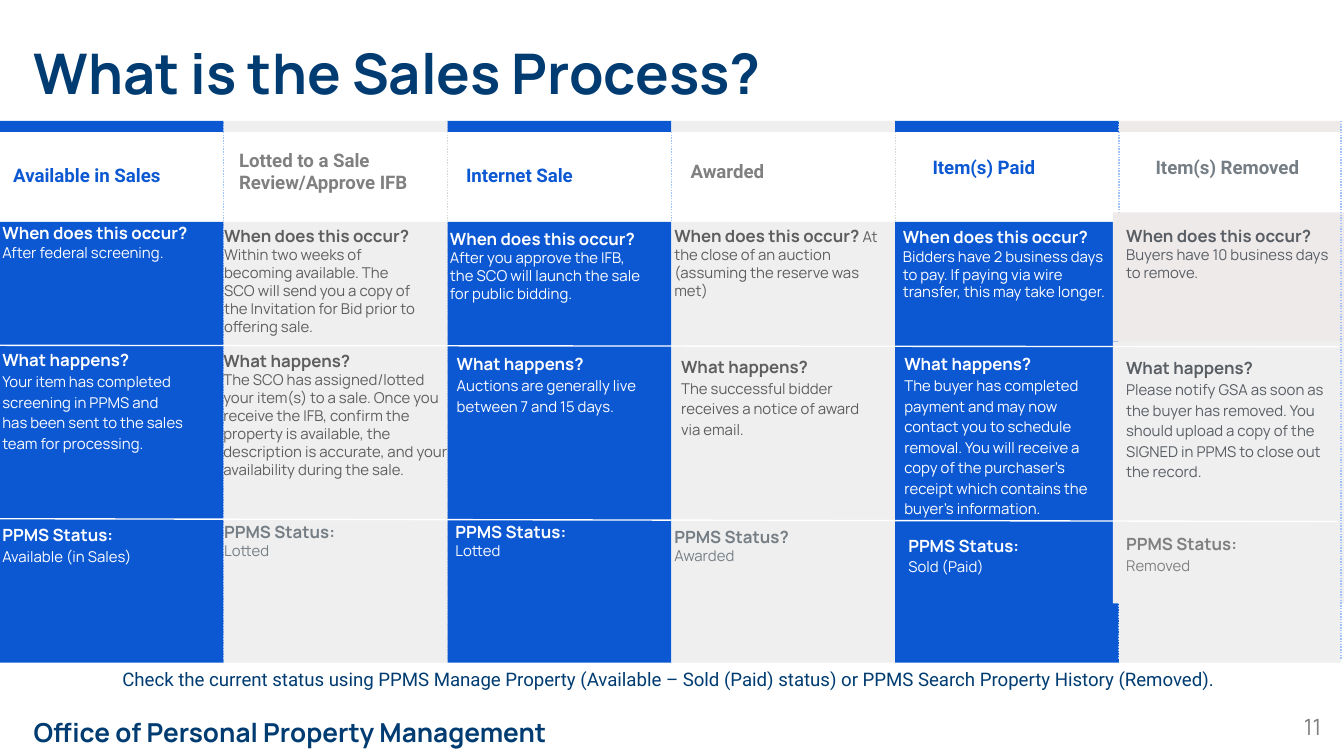
import dataclasses
import typing

import lxml.etree
import pptx
import pptx.dml.color
import pptx.enum.dml
import pptx.enum.shapes
import pptx.enum.text
import pptx.oxml.ns
import pptx.util

COLOURS = {
    "navy": "003C71", "blue": "0C58D3", "pale": "EFEFEF", "warm": "EEEAEA",
    "white": "FFFFFF", "text": "5E5E5E", "slate": "595E64", "steel": "767E85",
    "grey": "808080", "blue dots": "A1C3FA", "grey dots": "D9D9D9",
}
COLUMN_STEP = 119.9
LAST_WIDTH = 118.8
STRIP_TOP, STRIP_HEIGHT = 64.8, 5.8
BODY_TOP, BODY_HEIGHT = 118.8, 236.2
DOTS_BOTTOM = 353.5
LEFT = pptx.enum.text.PP_ALIGN.LEFT
CENTRE = pptx.enum.text.PP_ALIGN.CENTER
RIGHT = pptx.enum.text.PP_ALIGN.RIGHT


@dataclasses.dataclass
class Cell:
    """One question and answer; inline puts both in the same paragraph."""
    box: tuple
    heading: str
    answer: str
    colour: str
    spacing: typing.Optional[float] = None
    inline: bool = False
    fill: typing.Optional[str] = None


@dataclasses.dataclass
class Stage:
    title: list
    title_box: tuple
    title_colour: str
    fill: str
    strip: str
    dots: str
    cells: list
    middle: bool = False


WHEN = "When does this occur?"
WHAT = "What happens?"
STATUS = "PPMS Status:"

STAGES = [
    Stage(["Available in Sales"], (0, 79.2, 120, 28.8), "blue", "blue", "blue", "blue dots", [
        Cell((-5.8, 112.3, 126, 69), WHEN, "After federal screening.", "white", inline=True),
        Cell((-5.8, 178.6, 113, 90.7), WHAT,
             "Your item has completed screening in PPMS and has been sent to the sales "
             "team for processing.", "white", 1.15),
        Cell((-5.8, 272.2, 113, 58.3), STATUS, "Available (in Sales)", "white", 1.15),
    ]),
    Stage(["Lotted to a Sale", "Review/Approve IFB"], (121, 71.3, 117.4, 41), "grey",
          "pale", "pale", "grey dots", [
        Cell((113, 113.8, 120.2, 69), WHEN,
             "Within two weeks of becoming available. The SCO will send you a copy of the "
             "Invitation for Bid prior to offering sale.", "text", inline=True),
        Cell((112.6, 180.7, 136.8, 111.6), WHAT,
             "The SCO has assigned/lotted your item(s) to a sale. Once you receive the IFB, "
             "confirm the property is available, the description is accurate, and your "
             "availability during the sale.", "text"),
        Cell((113, 272.2, 104.4, 35.3), STATUS, "Lotted", "steel"),
    ], middle=True),
    Stage(["Internet Sale"], (242.6, 79.2, 113.8, 26.6), "blue", "blue", "blue", "blue dots", [
        Cell((234, 115.2, 120.2, 69), WHEN,
             "After you approve the IFB, the SCO will launch the sale for public bidding.",
             "white"),
        Cell((237.6, 180.7, 124.6, 111.6), WHAT,
             "Auctions are generally live between 7 and 15 days.", "white", 1.15),
        Cell((236.9, 272.2, 113.8, 35.3), STATUS, "Lotted", "white"),
    ]),
    Stage(["Awarded"], (362.9, 71.3, 117.4, 41), "grey", "pale", "pale", "grey dots", [
        Cell((354.2, 113.8, 127.4, 69), WHEN,
             "At the close of an auction (assuming the reserve was met)", "text", inline=True),
        Cell((357.8, 182.2, 113.8, 148.3), WHAT,
             "The successful bidder receives a notice of award via email.", "text", 1.15),
        Cell((354.2, 275, 121, 35.3), "PPMS Status?", "Awarded", "steel"),
    ], middle=True),
    Stage(["Item(s) Paid"], (492.5, 74.9, 95, 38.9), "blue", "blue", "blue", "blue dots", [
        Cell((476.6, 114.5, 126, 69), WHEN,
             "Bidders have 2 business days to pay. If paying via wire transfer, this may "
             "take longer.", "white"),
        Cell((477.4, 180.7, 117.4, 157), WHAT,
             "The buyer has completed payment and may now contact you to schedule removal. "
             "You will receive a copy of the purchaser’s receipt which contains the "
             "buyer’s information.", "white", 1.15),
        Cell((479.5, 277.9, 104.4, 71.3), STATUS, "Sold (Paid)", "white", 1.15),
    ]),
    Stage(["Item(s) Removed"], (612, 74.9, 93.6, 38.9), "steel", "pale", "warm", "blue dots", [
        Cell((596.2, 113.8, 126, 69), WHEN, "Buyers have 10 business days to remove.",
             "slate", inline=True, fill="warm"),
        Cell((596.2, 182.9, 127.4, 140.4), WHAT,
             "Please notify GSA as soon as the buyer has removed. You should upload a copy "
             "of the SIGNED in PPMS to close out the record.", "slate", 1.15, fill="pale"),
        Cell((596.2, 277.2, 104.4, 54.7), STATUS, "Removed", "grey", 1.15, inline=True),
    ]),
]


class SlideBuilder:
    """Holds the slide and draws on it; boxes are (left, top, width, height) in points."""

    def __init__(self, slide):
        self.slide = slide

    def colour(self, name):
        return pptx.dml.color.RGBColor.from_string(COLOURS[name])

    def rectangle(self, box, fill):
        shape = self.slide.shapes.add_shape(
            pptx.enum.shapes.MSO_SHAPE.RECTANGLE, *map(pptx.util.Pt, box))
        shape.shadow.inherit = False
        shape.fill.solid()
        shape.fill.fore_color.rgb = self.colour(fill)
        shape.line.fill.background()
        return shape

    def line(self, start, end, colour, dotted=False):
        connector = self.slide.shapes.add_connector(
            pptx.enum.shapes.MSO_CONNECTOR.STRAIGHT, *map(pptx.util.Pt, start + end))
        connector.line.color.rgb = self.colour(colour)
        connector.line.width = pptx.util.Pt(0.75)
        if dotted:
            connector.line.dash_style = pptx.enum.dml.MSO_LINE.ROUND_DOT
        lxml.etree.SubElement(connector.element.spPr, pptx.oxml.ns.qn("a:effectLst"))

    def text(self, box, paragraphs, colour, font="Manrope", inset=7.2, spacing=None,
             align=LEFT, middle=False, fill=None):
        """Each paragraph is a list of runs, and each run is (text, size, bold)."""
        if fill:
            shape = self.rectangle(box, fill)
        else:
            shape = self.slide.shapes.add_textbox(*map(pptx.util.Pt, box))
        frame = shape.text_frame
        frame.word_wrap = True
        anchors = pptx.enum.text.MSO_ANCHOR
        frame.vertical_anchor = anchors.MIDDLE if middle else anchors.TOP
        frame.margin_left = frame.margin_right = pptx.util.Pt(inset)
        frame.margin_top = frame.margin_bottom = pptx.util.Pt(inset)
        for index, runs in enumerate(paragraphs):
            paragraph = frame.add_paragraph() if index else frame.paragraphs[0]
            paragraph.alignment = align
            if spacing:
                paragraph.line_spacing = spacing
            for words, size, bold in runs:
                run = paragraph.add_run()
                run.text = words
                run.font.name = font
                run.font.size = pptx.util.Pt(size)
                run.font.bold = bold
                run.font.color.rgb = self.colour(colour)

    def cell(self, cell):
        answer = (cell.answer, 8, False)
        if cell.inline:
            paragraphs = [[(cell.heading + " ", 9, True), answer]]
        else:
            paragraphs = [[(cell.heading, 9, True)], [answer]]
        self.text(cell.box, paragraphs, cell.colour, spacing=cell.spacing, fill=cell.fill)

    def stage(self, stage, left, width):
        self.rectangle((left, BODY_TOP, width, BODY_HEIGHT), stage.fill)
        self.rectangle((left, STRIP_TOP, width, STRIP_HEIGHT), stage.strip)
        self.text(stage.title_box, [[(words, 10, True)] for words in stage.title],
                  stage.title_colour, "Roboto", spacing=None if stage.middle else 1.15,
                  middle=stage.middle)
        for cell in stage.cells:
            self.cell(cell)
        right = left + width
        self.line((right, STRIP_TOP), (right, DOTS_BOTTOM), stage.dots, dotted=True)


def main():
    presentation = pptx.Presentation()
    presentation.slide_width = pptx.util.Pt(720)
    presentation.slide_height = pptx.util.Pt(405)
    builder = SlideBuilder(presentation.slides.add_slide(presentation.slide_layouts[6]))

    builder.text((18, 385.2, 318.2, 13.7), [[("Office of Personal Property Management", 14, True)]],
                 "navy", inset=0, middle=True)
    builder.text((18, 20.9, 612.7, 40.3), [[("What is the Sales Process?", 30, True)]],
                 "navy", inset=0)
    for index, stage in enumerate(STAGES):
        width = LAST_WIDTH if index == len(STAGES) - 1 else COLUMN_STEP
        builder.stage(stage, index * COLUMN_STEP, width)
    builder.text((-2.2, 349.2, 720, 52.6), [[(
        "Check the current status using PPMS Manage Property (Available – Sold (Paid) status) "
        "or PPMS Search Property History (Removed).", 10, False)]],
        "navy", "Roboto", spacing=1.15, align=CENTRE)
    builder.line((-2.2, 185), (717.1, 185.8), "white")
    builder.line((-1.4, 277.9), (716.4, 279.4), "white")
    builder.text((664.6, 382.3, 43.2, 22.3), [[("11", 12, False)]], "grey", inset=0, align=RIGHT)
    presentation.save("out.pptx")


if __name__ == "__main__":
    main()
